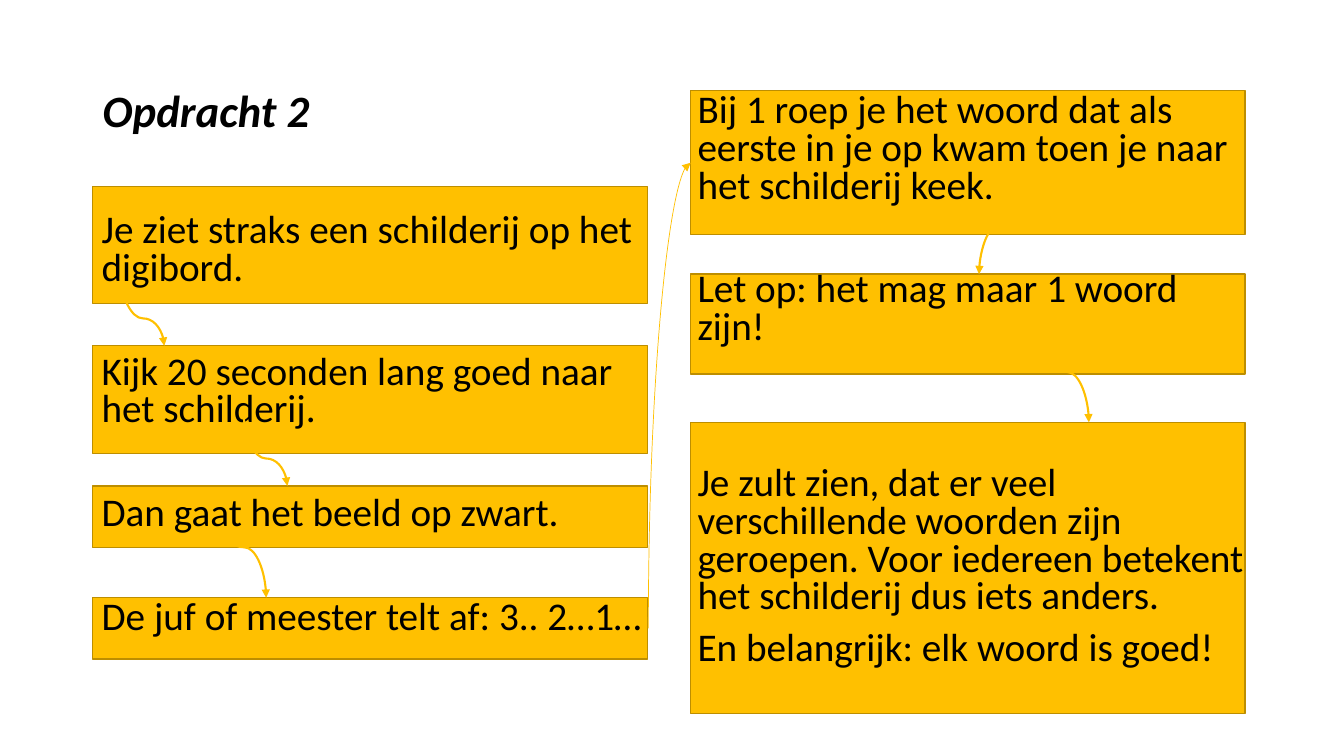
from lxml import etree
from pptx import Presentation
from pptx.dml.color import RGBColor
from pptx.enum.shapes import MSO_CONNECTOR, MSO_SHAPE
from pptx.enum.text import MSO_ANCHOR
from pptx.oxml.ns import qn
from pptx.util import Inches, Pt

RECT = MSO_SHAPE.RECTANGLE
CURVE = MSO_CONNECTOR.CURVE
TOP, MIDDLE = MSO_ANCHOR.TOP, MSO_ANCHOR.MIDDLE
GOLD = RGBColor(0xFF, 0xC0, 0x00)
DARK_GOLD = RGBColor(0xBD, 0x8E, 0x00)
BLACK = RGBColor(0, 0, 0)

FONT = "Calibri"
CARD_W = 5.5
TEXT_W = 5.67
ARROW_W, ARROW_H = 0.43, 0.69
PARA_GAP = 10
EMPTY_LINE = 37.3

# Cards: top, height. Arrows: card reached, tip offset, direction, bend.
# Texts: wording, number of empty lines above.
LEFT = dict(
    x=0.92,
    cards=[(1.85, 1.16), (3.43, 1.07), (4.82, 0.61), (5.93, 0.61)],
    arrows=[(1, 0.71, 1, 0.606), (2, 1.93, 1, 0.606), (3, 1.72, 1, 0.276)],
    text_box=(0.91, 2.07, TEXT_W, 4.76),
    texts=[
        ("Je ziet straks een schilderij op het digibord.", 0),
        ("Kijk 20 seconden lang goed naar het schilderij.", 1),
        ("Dan gaat het beeld op zwart.", 1),
        ("De juf of meester telt af: 3.. 2…1…", 1),
    ],
)
RIGHT = dict(
    x=6.85,
    cards=[(0.9, 1.43), (2.72, 0.99), (4.19, 2.89)],
    arrows=[(1, 2.86, -1, 0.276), (2, 3.95, 1, 0.276)],
    text_box=(6.82, 0.88, TEXT_W, 5.81),
    texts=[
        ("Bij 1 roep je het woord dat als eerste in je op kwam "
         "toen je naar het schilderij keek.", 0),
        ("Let op: het mag maar 1 woord zijn!", 1),
        ("Je zult zien, dat er veel verschillende woorden zijn geroepen. "
         "Voor iedereen betekent het schilderij dus iets anders.", 2),
        ("En belangrijk: elk woord is goed!", 0),
    ],
)


def add_text(s, box, texts, size, spacing, anchor=TOP, emphasis=False):
    """Write paragraphs in a wrapped text box, with gaps as space before."""
    tf = s.shapes.add_textbox(*map(Inches, box)).text_frame
    tf.word_wrap = True
    tf.vertical_anchor = anchor
    for i, (text, empty_lines) in enumerate(texts):
        p = tf.add_paragraph() if i else tf.paragraphs[0]
        p.line_spacing = spacing
        if i:
            p.space_before = Pt(PARA_GAP + empty_lines * EMPTY_LINE)
        r = p.add_run()
        r.text = text
        r.font.name = FONT
        r.font.size = Pt(size)
        r.font.color.rgb = BLACK
        if emphasis:
            r.font.bold = r.font.italic = True


def add_card(s, x, y, w, h):
    """Draw one gold card."""
    sp = s.shapes.add_shape(RECT, *map(Inches, (x, y, w, h)))
    sp.shadow.inherit = False
    sp.fill.solid()
    sp.fill.fore_color.rgb = GOLD
    sp.line.color.rgb = DARK_GOLD
    sp.line.width = Pt(1)


def add_curve(s, start, end, width, bend=None):
    """Draw a curved arrow that leaves vertically; without bend it turns once."""
    (x1, y1), (x2, y2) = start, end
    cx, cy = (x1 + x2) / 2, (y1 + y2) / 2
    half_w, half_h = abs(y2 - y1) / 2, abs(x2 - x1) / 2
    right = 1 if x2 > x1 else -1
    down = 1 if y2 > y1 else -1
    cxn = s.shapes.add_connector(CURVE, *map(Inches, (
        cx + right * half_w, cy - down * half_h,
        cx - right * half_w, cy + down * half_h)))
    cxn.line.color.rgb = GOLD
    cxn.line.width = Pt(width)
    sp_pr = cxn._element.spPr
    turn = 270 if right == down == 1 else 90
    sp_pr.find(qn("a:xfrm")).set("rot", str(turn * 60000))
    geom = sp_pr.find(qn("a:prstGeom"))
    if bend is None:
        geom.set("prst", "curvedConnector2")
    else:
        etree.SubElement(geom.find(qn("a:avLst")), qn("a:gd"),
                         name="adj1", fmla=f"val {round(bend * 100000)}")
    etree.SubElement(sp_pr.find(qn("a:ln")), qn("a:tailEnd"), type="triangle")
    etree.SubElement(sp_pr, qn("a:effectLst"))


def add_column(s, x, cards, arrows, text_box, texts):
    """Draw a column of cards with its text and the arrows between cards."""
    for top, height in cards:
        add_card(s, x, top, CARD_W, height)
    add_text(s, text_box, texts, 28, 0.8)
    for card, offset, direction, bend in arrows:
        tip_x, tip_y = x + offset, cards[card][0]
        start = (tip_x - direction * ARROW_W, tip_y - ARROW_H)
        add_curve(s, start, (tip_x, tip_y), 1.5, bend)


def link_columns(s, source, target):
    """Lead from the last card of one column to the first of the next."""
    (top1, height1), (top2, height2) = source["cards"][-1], target["cards"][0]
    add_curve(s, (source["x"] + CARD_W + 0.01, top1 + height1 / 2),
              (target["x"], top2 + height2 / 2), 0.5)


def main():
    """Build the slide and save it."""
    prs = Presentation()
    prs.slide_width, prs.slide_height = Inches(13.33), Inches(7.5)
    s = prs.slides.add_slide(prs.slide_layouts[6])
    add_text(s, (0.92, 0.4, 11.5, 1.45), [("Opdracht 2", 0)], 32, 0.9,
             MIDDLE, emphasis=True)
    for column in (LEFT, RIGHT):
        add_column(s, **column)
    link_columns(s, LEFT, RIGHT)
    prs.save("out.pptx")


if __name__ == "__main__":
    main()
